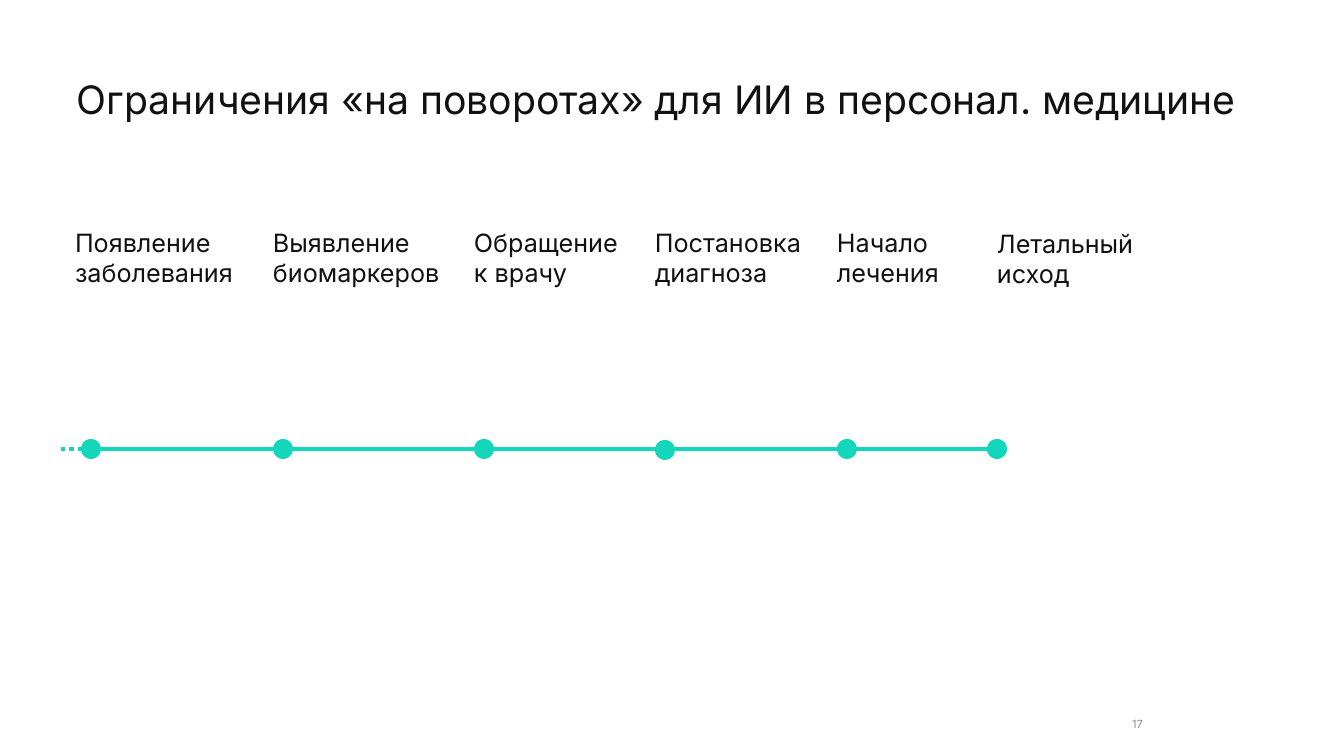
"""Builds the slide with the disease timeline and its six stages."""
import pptx
import pptx.dml.color
import pptx.enum.dml
import pptx.enum.shapes
import pptx.enum.text
import pptx.oxml.ns
import pptx.util
from lxml import etree

TITLE = "Ограничения «на поворотах» для ИИ в персонал. медицине"
PAGE_NUMBER = "17"
# label, label left, label top, label width, dot left, dot top
STAGES = [
    ("Появление заболевания", 75, 227, 164, 81, 439),
    ("Выявление биомаркеров", 273, 227, 167, 273, 439),
    ("Обращение к врачу", 474, 227, 147, 474, 439),
    ("Постановка диагноза", 655, 227, 147, 655, 440),
    ("Начало лечения", 837, 227, 103, 837, 439),
    ("Летальный исход", 997, 228, 147, 987, 439),
]
LABEL_HEIGHT = 61
DOT = 20
LEAD_IN = 20
LINE_Y = 449
INK, GREY, TEAL = "111111", "8C8C8C", "13D6BB"
FONT = "Inter"
EMU_PER_PX = 914400 / 100.8


def px(*lengths):
    return [pptx.util.Emu(round(length * EMU_PER_PX)) for length in lengths]


def color(value):
    return pptx.dml.color.RGBColor.from_string(value)


def write(shape, text, size, ink, anchor=pptx.enum.text.MSO_ANCHOR.TOP):
    frame = shape.text_frame
    frame.word_wrap = True
    frame.vertical_anchor = anchor
    frame.margin_left = frame.margin_top = frame.margin_right = frame.margin_bottom = 0
    frame.text = text
    paragraph = frame.paragraphs[0]
    paragraph.font.name = FONT
    paragraph.font.size = pptx.util.Pt(size)
    paragraph.font.color.rgb = color(ink)
    return paragraph


def add_text(slide, box, *style):
    shape = slide.shapes.add_textbox(*px(*box))
    paragraph = write(shape, *style)
    shape.text_frame.auto_size = pptx.enum.text.MSO_AUTO_SIZE.SHAPE_TO_FIT_TEXT
    return paragraph


def add_line(slide, left, right, dash=None):
    line = slide.shapes.add_connector(
        pptx.enum.shapes.MSO_CONNECTOR.STRAIGHT, *px(left, LINE_Y, right, LINE_Y))
    line.line.color.rgb = color(TEAL)
    line.line.width = pptx.util.Pt(3)
    if dash is not None:
        line.line.dash_style = dash
    etree.SubElement(line._element.spPr, pptx.oxml.ns.qn("a:effectLst"))


def add_dot(slide, left, top):
    dot = slide.shapes.add_shape(
        pptx.enum.shapes.MSO_SHAPE.OVAL, *px(left, top, DOT, DOT))
    dot.shadow.inherit = False
    dot.fill.solid()
    dot.fill.fore_color.rgb = color(TEAL)
    dot.line.fill.background()


def main():
    presentation = pptx.Presentation()
    presentation.slide_width, presentation.slide_height = px(1344, 756)
    slide = presentation.slides.add_slide(presentation.slide_layouts[5])

    title = slide.shapes.title
    title.left, title.top, title.width, title.height = px(77, 81, 1190, 42)
    heading = write(title, TITLE, 28, INK)
    title.text_frame.auto_size = pptx.enum.text.MSO_AUTO_SIZE.NONE
    heading.alignment = pptx.enum.text.PP_ALIGN.LEFT
    heading.line_spacing = 0.9

    first, last = STAGES[0][4], STAGES[-1][4]
    add_line(slide, first - LEAD_IN, first, pptx.enum.dml.MSO_LINE.ROUND_DOT)
    add_line(slide, first + DOT, last)
    for label, left, top, width, dot_left, dot_top in STAGES:
        add_text(slide, (left, top, width, LABEL_HEIGHT), label, 18, INK)
        add_dot(slide, dot_left, dot_top)

    number = add_text(slide, (1077, 718, 66, 13), PAGE_NUMBER, 8, GREY,
                      pptx.enum.text.MSO_ANCHOR.BOTTOM)
    number.alignment = pptx.enum.text.PP_ALIGN.RIGHT
    presentation.save("out.pptx")


if __name__ == "__main__":
    main()
